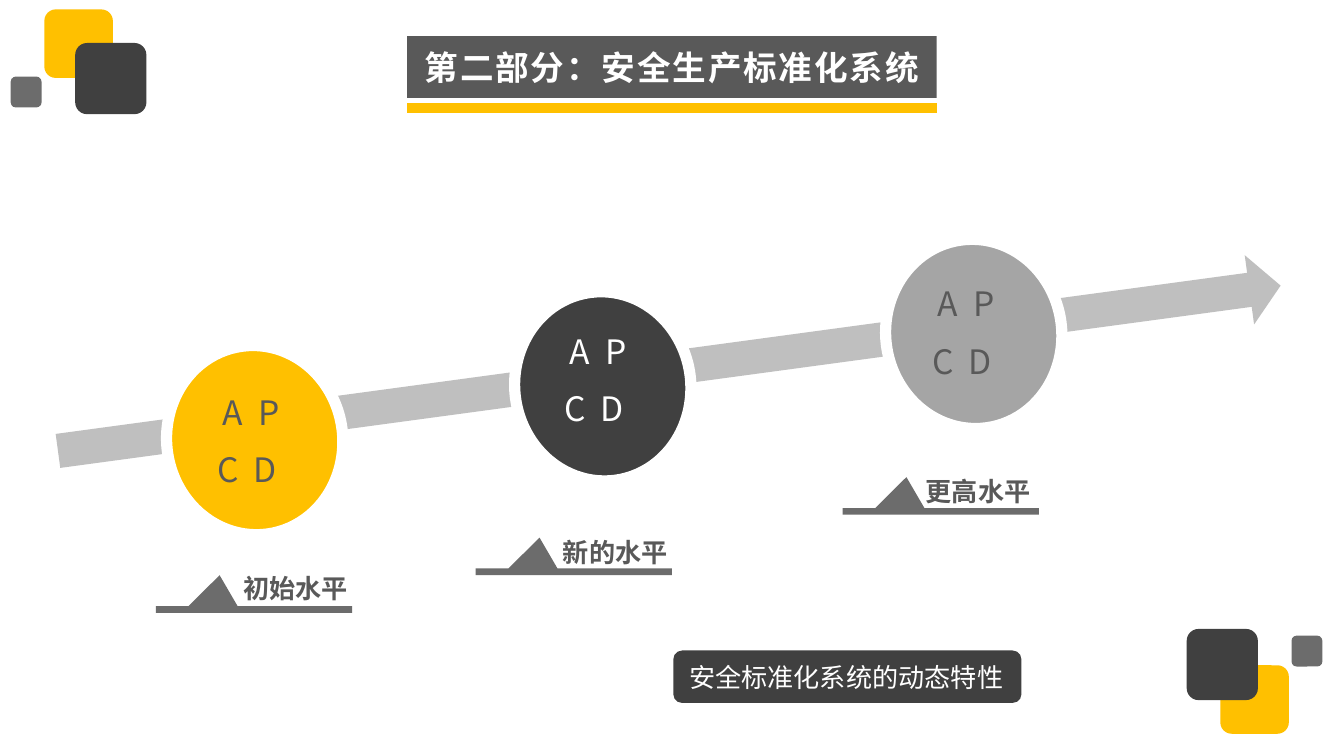
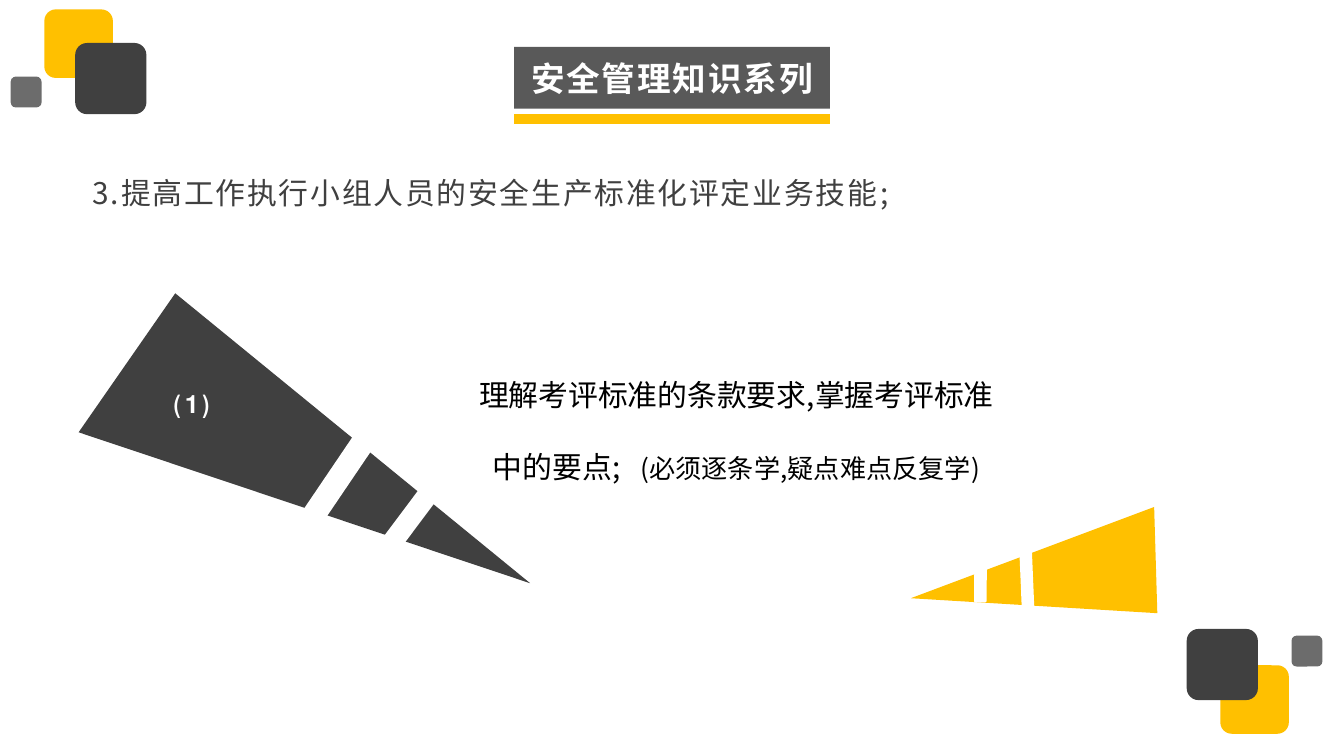
"""Build two safety-standardisation slides on a grid of tenth-of-an-inch cells."""
from dataclasses import dataclass, replace
from typing import Optional

from lxml.etree import SubElement
from pptx import Presentation
from pptx.dml.color import RGBColor
from pptx.enum.shapes import MSO_CONNECTOR, MSO_SHAPE
from pptx.enum.text import MSO_ANCHOR, MSO_AUTO_SIZE, PP_ALIGN
from pptx.oxml.ns import qn
from pptx.util import Inches, Pt

COLUMNS, ROWS = 100, 56.25
PAGE_WIDTH, PAGE_HEIGHT = Inches(10), Inches(5.625)
COLORS = {
    "amber": "FFC000",
    "charcoal": "404040",
    "slate": "595959",
    "bar": "6C6C6C",
    "gray": "A5A5A5",
    "silver": "BFBFBF",
    "white": "FFFFFF",
    "black": "000000",
}
FONT = "Noto Sans CJK SC"
TILT = 352.3


def column(count: float) -> int:
    return round(PAGE_WIDTH * count / COLUMNS)


def row(count: float) -> int:
    return round(PAGE_HEIGHT * count / ROWS)


def color(name: str) -> RGBColor:
    return RGBColor.from_string(COLORS[name])


@dataclass(frozen=True)
class Area:
    left: float
    top: float
    width: float
    height: float

    def frame(self) -> tuple[int, int, int, int]:
        return column(self.left), row(self.top), column(self.width), row(self.height)

    def mirrored(self) -> "Area":
        return replace(self, left=99.2 - self.left - self.width,
                       top=55.3 - self.top - self.height)


@dataclass(frozen=True)
class Piece:
    kind: MSO_SHAPE
    area: Area
    fill: str
    rotation: float = 0
    adjustments: tuple[float, ...] = ()
    outline: float = 0
    opacity: int = 100


@dataclass(frozen=True)
class Span:
    text: str
    size: Optional[float] = None
    spacing: float = 0


@dataclass(frozen=True)
class Style:
    size: float
    color: str
    bold: bool = False
    spacing: float = 0
    align: PP_ALIGN = PP_ALIGN.LEFT
    line_spacing: Optional[float] = None
    font: str = FONT
    anchor: MSO_ANCHOR = MSO_ANCHOR.TOP
    wrap: bool = False


@dataclass(frozen=True)
class Stage:
    label: str
    fill: str
    ink: str
    circle: tuple[float, float]
    letters: tuple[float, float]
    bar: tuple[float, float]
    name: tuple[float, float]


@dataclass(frozen=True)
class Wedge:
    triangle: Piece
    gaps: tuple[Piece, ...]


TILES = (
    Piece(MSO_SHAPE.ROUNDED_RECTANGLE, Area(3.3, 0.7, 5.1, 5.1), "amber"),
    Piece(MSO_SHAPE.ROUNDED_RECTANGLE, Area(5.6, 3.2, 5.3, 5.3), "charcoal"),
    Piece(MSO_SHAPE.ROUNDED_RECTANGLE, Area(0.8, 5.7, 2.3, 2.3), "charcoal", opacity=77),
)
TITLE = Style(18, "white", bold=True, spacing=1, align=PP_ALIGN.CENTER,
              anchor=MSO_ANCHOR.MIDDLE, wrap=True)
LABEL = Style(14, "slate", bold=True)
STAGES = (
    Stage("初始水平", "amber", "slate", (12.4, 25.7), (14.9, 28.7), (11.6, 45.1), (17.1, 42.1)),
    Stage("新的水平", "charcoal", "white", (38.3, 21.7), (40.7, 24.1), (35.4, 42.3), (40.9, 39.4)),
    Stage("更高水平", "gray", "slate", (65.9, 17.8), (68.1, 20.6), (62.7, 37.8), (67.9, 34.9)),
)


def gap(area: Area, rotation: float) -> Piece:
    return Piece(MSO_SHAPE.RECTANGLE, area, "white", rotation, outline=1)


def triangle(area: Area, fill: str, rotation: float) -> Piece:
    return Piece(MSO_SHAPE.ISOSCELES_TRIANGLE, area, fill, rotation, (0.21,))


DARK_WEDGE = Wedge(
    triangle(Area(17.1, 19.7, 12.6, 34), "charcoal", 124.8),
    (gap(Area(21.7, 34.5, 7.4, 1.6), 304.1), gap(Area(27.7, 38.1, 5.3, 1.4), 306.8)),
)
AMBER_WEDGE = Wedge(
    triangle(Area(72.9, 32.8, 7.9, 18.3), "amber", 268.3),
    (gap(Area(74.1, 42.8, 4.6, 0.8), 87.6), gap(Area(71.3, 42.7, 3.3, 0.8), 90.4)),
)


def draw_piece(page, piece: Piece):
    shape = page.shapes.add_shape(piece.kind, *piece.area.frame())
    shape.shadow.inherit = False
    shape.rotation = piece.rotation
    for index, value in enumerate(piece.adjustments):
        shape.adjustments[index] = value
    shape.fill.solid()
    shape.fill.fore_color.rgb = color(piece.fill)
    if piece.opacity < 100:
        solid = shape._element.spPr.find(qn("a:solidFill"))
        SubElement(solid[0], qn("a:alpha"), val=str(piece.opacity * 1000))
    if piece.outline:
        shape.line.color.rgb = color("white")
        shape.line.width = Pt(piece.outline)
    else:
        shape.line.fill.background()
    return shape


def write(box, lines: tuple[tuple[Span, ...], ...], style: Style) -> None:
    frame = box.text_frame
    frame.word_wrap = style.wrap
    frame.vertical_anchor = style.anchor
    for index, spans in enumerate(lines):
        para = frame.add_paragraph() if index else frame.paragraphs[0]
        para.alignment = style.align
        if style.line_spacing:
            para.line_spacing = style.line_spacing
        font = para.font
        font.name = style.font
        font.size = Pt(style.size)
        font.bold = style.bold
        font.color.rgb = color(style.color)
        SubElement(font._element, qn("a:ea"), typeface=style.font)
        if style.spacing:
            font._element.set("spc", str(round(style.spacing * 100)))
        for span in spans:
            run = para.add_run()
            run.text = span.text
            if span.size:
                run.font.size = Pt(span.size)
            if span.spacing:
                run.font._element.set("spc", str(round(span.spacing * 100)))


def draw_text(page, area: Area, lines: tuple[tuple[Span, ...], ...], style: Style) -> None:
    box = page.shapes.add_textbox(*area.frame())
    write(box, lines, style)
    box.text_frame.auto_size = MSO_AUTO_SIZE.SHAPE_TO_FIT_TEXT


def draw_title(page, text: str, top: float, width: float) -> None:
    left = (COLUMNS - width) / 2
    band = draw_piece(page, Piece(MSO_SHAPE.RECTANGLE, Area(left, top, width, 4.6), "slate"))
    write(band, ((Span(text),),), TITLE)
    frame = band.text_frame
    frame.margin_left = frame.margin_right = column(1.2)
    frame.margin_top = frame.margin_bottom = row(0.8)
    level = row(top + 5.35)
    rule = page.shapes.add_connector(
        MSO_CONNECTOR.STRAIGHT, column(left), level, column(left + width), level)
    rule.line.color.rgb = color("amber")
    rule.line.width = Pt(5)
    SubElement(rule._element.spPr, qn("a:effectLst"))


def add_page(deck, title: str, top: float, width: float):
    page = deck.slides.add_slide(deck.slide_layouts[6])
    for tile in TILES:
        draw_piece(page, tile)
    for tile in TILES:
        draw_piece(page, replace(tile, area=tile.area.mirrored()))
    draw_title(page, title, top, width)
    return page


def draw_stage(page, stage: Stage) -> None:
    draw_piece(page, Piece(MSO_SHAPE.OVAL, Area(*stage.circle, 13.1, 14.1), stage.fill,
                           TILT, outline=6))
    draw_piece(page, Piece(MSO_SHAPE.RECTANGULAR_CALLOUT, Area(*stage.bar, 14.6, 0.5), "bar",
                           adjustments=(-0.175, -5.1)))
    draw_text(page, Area(*stage.name, 9.9, 3.4), ((Span(stage.label),),), LABEL)
    left, top = stage.letters
    letters = Style(18, stage.ink, align=PP_ALIGN.CENTER)
    areas = (Area(left, top, 7.6, 4), Area(left - 3.1, top + 4.25, 13.2, 4))
    for area, (first, second) in zip(areas, ("AP", "CD")):
        spans = (Span(first), Span(" ", spacing=4), Span(second))
        draw_text(page, area, (spans,), letters)


def draw_wedge(page, wedge: Wedge) -> None:
    for piece in (wedge.triangle, *wedge.gaps):
        draw_piece(page, piece)


def build_levels(deck) -> None:
    page = add_page(deck, "第二部分：安全生产标准化系统", 2.7, 39.4)
    draw_piece(page, Piece(MSO_SHAPE.DOWN_ARROW, Area(47.2, -18.5, 5.2, 91.8), "silver",
                           262.3, (0.49, 0.45)))
    for stage in STAGES:
        draw_stage(page, stage)
    caption = draw_piece(page, Piece(MSO_SHAPE.ROUNDED_RECTANGLE,
                                     Area(50.1, 48.4, 25.9, 3.9), "charcoal"))
    write(caption, ((Span("安全标准化系统的动态特性"),),),
          Style(14, "white", anchor=MSO_ANCHOR.MIDDLE, wrap=True))


def build_skills(deck) -> None:
    page = add_page(deck, "安全管理知识系列", 3.5, 23.5)
    draw_text(page, Area(5.9, 12.5, 62.1, 3.7),
              ((Span("3.提高工作执行小组人员的安全生产标准化评定业务技能;"),),),
              Style(16, "charcoal", spacing=1))
    draw_text(page, Area(29.8, 24.9, 50, 11), (
        (Span("理解考评标准的条款要求,掌握考评标准"),),
        (Span("中的要点;"), Span(" ", spacing=7.2), Span("(必须逐条学,疑点难点反复学)", 14)),
    ), Style(16, "black", align=PP_ALIGN.CENTER, line_spacing=2, wrap=True))
    draw_wedge(page, DARK_WEDGE)
    draw_text(page, Area(12, 27.8, 4.6, 4), ((Span("⑴"),),),
              Style(18, "white", bold=True, font="Calibri"))
    draw_wedge(page, AMBER_WEDGE)


def main() -> None:
    deck = Presentation()
    deck.slide_width, deck.slide_height = PAGE_WIDTH, PAGE_HEIGHT
    build_levels(deck)
    build_skills(deck)
    deck.save("out.pptx")


if __name__ == "__main__":
    main()
